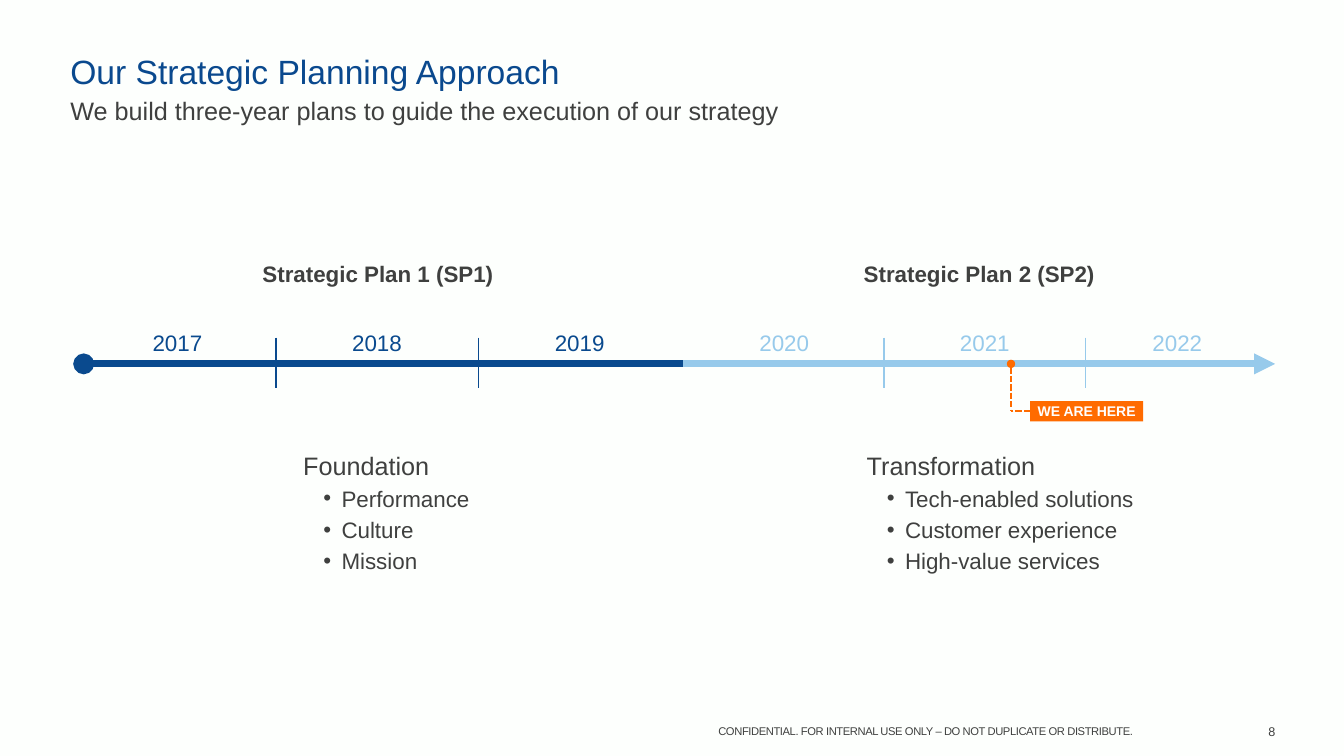
"""Build the strategic planning timeline slide."""
from dataclasses import dataclass, field

from lxml.etree import SubElement
from pptx import Presentation
from pptx.dml.color import RGBColor
from pptx.enum.dml import MSO_LINE
from pptx.enum.shapes import MSO_CONNECTOR, MSO_SHAPE
from pptx.enum.text import MSO_ANCHOR, PP_ALIGN
from pptx.oxml.ns import qn
from pptx.shapes.autoshape import Shape
from pptx.shapes.connector import Connector
from pptx.slide import Slide
from pptx.util import Pt


@dataclass(frozen=True)
class Theme:
    """Colours and type sizes of the slide."""
    font: str = "Arial"
    background: str = "FDFFFD"
    title_blue: str = "0A498E"
    dark_blue: str = "0A4A8E"
    light_blue: str = "97CAEB"
    orange: str = "FF6B00"
    text: str = "3F403F"
    white: str = "FFFFFF"
    title_size: float = 24
    lead_size: float = 18
    body_size: float = 16
    badge_size: float = 10
    number_size: float = 9
    footer_size: float = 8


THEME = Theme()


@dataclass(frozen=True)
class Label:
    """A single-paragraph text box, with lengths in points."""
    text: str
    left: float
    top: float
    width: float
    height: float
    size: float = THEME.body_size
    color: str = THEME.text
    bold: bool = False
    align: PP_ALIGN = PP_ALIGN.LEFT
    anchor: MSO_ANCHOR = MSO_ANCHOR.TOP
    padded: bool = True
    line_spacing: float = 1.0
    tracking: float = 0


@dataclass(frozen=True)
class Plan:
    """A three-year plan with its part of the timeline and its themes."""
    name: str
    left: float
    width: float
    color: str
    years: dict[str, float]
    ticks: tuple[float, ...]
    goal: str
    goal_left: float
    themes: tuple[str, ...]


@dataclass(frozen=True)
class Line:
    """A straight line, with lengths in points."""
    start: tuple[float, float]
    end: tuple[float, float]
    color: str
    weight: float
    dashed: bool = False
    ends: dict[str, str] = field(default_factory=dict)


LABELS = (
    Label("CONFIDENTIAL. FOR INTERNAL USE ONLY – DO NOT DUPLICATE OR DISTRIBUTE.",
          486, 514.08, 350.64, 17.28, THEME.footer_size, align=PP_ALIGN.CENTER, tracking=-0.3),
    Label("8", 874.08, 513.36, 43.92, 18, THEME.number_size,
          align=PP_ALIGN.RIGHT, anchor=MSO_ANCHOR.MIDDLE),
    Label("Our Strategic Planning Approach", 43.2, 36, 874.08, 33.12, THEME.title_size,
          THEME.title_blue, anchor=MSO_ANCHOR.BOTTOM, line_spacing=0.9),
    Label("We build three-year plans to guide the execution of our strategy",
          43.2, 64.8, 873.36, 28.8, THEME.lead_size),
)
PLANS = (
    Plan("Strategic Plan 1 (SP1)", 52.56, 434.88, THEME.dark_blue,
         {"2017": 97.2, "2018": 239.76, "2019": 384.48}, (197.28, 342),
         "Foundation", 209.52, ("Performance", "Culture", "Mission")),
    Plan("Strategic Plan 2 (SP2)", 488.16, 422.64, THEME.light_blue,
         {"2020": 530.64, "2021": 673.92, "2022": 811.44}, (631.44, 775.44),
         "Transformation", 612,
         ("Tech-enabled solutions", "Customer experience", "High-value services")),
)
AXIS_TOP = 259.92
AXIS_LINES = (
    Line((59.76, AXIS_TOP), (488.16, AXIS_TOP), THEME.dark_blue, 5, ends={"headEnd": "oval"}),
    Line((488.16, AXIS_TOP), (910.8, AXIS_TOP), THEME.light_blue, 5, ends={"tailEnd": "triangle"}),
)
TICK_TOP, TICK_BOTTOM = 241.2, 277.2
BADGE = Label("WE ARE HERE", 735.84, 286.56, 80.64, 14.4, THEME.badge_size, THEME.white,
              bold=True, align=PP_ALIGN.CENTER, anchor=MSO_ANCHOR.MIDDLE, padded=False)
MARKER_LEFT = 722.16
BADGE_MIDDLE = BADGE.top + BADGE.height / 2


def write_label(shape: Shape, label: Label) -> None:
    """Write a label's text into a shape."""
    frame = shape.text_frame
    frame.text = label.text
    frame.word_wrap = True
    frame.vertical_anchor = label.anchor
    if not label.padded:
        frame.margin_left = frame.margin_right = frame.margin_top = frame.margin_bottom = 0
    paragraph = frame.paragraphs[0]
    paragraph.alignment = label.align
    paragraph.line_spacing = label.line_spacing
    run = paragraph.runs[0]
    format_font(run.font, label.size, label.color, label.bold)
    if label.tracking:
        run.font._element.set("spc", str(round(label.tracking * 100)))


def format_font(font, size: float, color: str, bold: bool = False) -> None:
    """Apply the theme font with a size, colour and weight."""
    font.name = THEME.font
    font.size = Pt(size)
    font.bold = bold
    font.color.rgb = RGBColor.from_string(color)


def add_label(slide: Slide, label: Label) -> None:
    """Add a text box for a label."""
    box = slide.shapes.add_textbox(Pt(label.left), Pt(label.top), Pt(label.width), Pt(label.height))
    write_label(box, label)


def add_line(slide: Slide, line: Line) -> Connector:
    """Add a straight line with optional dashes and end marks."""
    connector = slide.shapes.add_connector(
        MSO_CONNECTOR.STRAIGHT, *(Pt(length) for length in (*line.start, *line.end)))
    connector.line.color.rgb = RGBColor.from_string(line.color)
    connector.line.width = Pt(line.weight)
    if line.dashed:
        connector.line.dash_style = MSO_LINE.SQUARE_DOT
    properties = connector._element.spPr
    for tag, kind in line.ends.items():
        SubElement(properties.find(qn("a:ln")), qn(f"a:{tag}"), type=kind)
    SubElement(properties, qn("a:effectLst"))
    return connector


def add_goal(slide: Slide, plan: Plan) -> None:
    """Add a plan's goal with its bulleted themes."""
    box = slide.shapes.add_textbox(Pt(plan.goal_left), Pt(318.24), Pt(243.36), Pt(96.48))
    frame = box.text_frame
    frame.text = "\n".join((plan.goal, *plan.themes))
    frame.word_wrap = True
    for index, paragraph in enumerate(frame.paragraphs):
        paragraph.space_after = Pt(3)
        if index:
            properties = paragraph._element.get_or_add_pPr()
            properties.set("marL", str(Pt(27.36)))
            properties.set("indent", str(Pt(-12.96)))
            SubElement(properties, qn("a:buFont"), typeface=THEME.font)
            SubElement(properties, qn("a:buChar"), char="•")
        size = THEME.body_size if index else THEME.lead_size
        format_font(paragraph.runs[0].font, size, THEME.text)


def add_plan(slide: Slide, plan: Plan) -> None:
    """Add a plan's heading, years, ticks and goal."""
    add_label(slide, Label(plan.name, plan.left, 185.76, plan.width, 19.44, bold=True,
                           align=PP_ALIGN.CENTER, padded=False))
    for year, left in plan.years.items():
        add_label(slide, Label(year, left, 235.44, 59.04, 19.44, color=plan.color,
                               align=PP_ALIGN.CENTER, padded=False))
    for left in plan.ticks:
        add_line(slide, Line((left, TICK_TOP), (left, TICK_BOTTOM), plan.color, 1))
    add_goal(slide, plan)


def add_marker(slide: Slide) -> None:
    """Add the badge for today and its dashed lead to the timeline."""
    badge = slide.shapes.add_shape(MSO_SHAPE.RECTANGLE, Pt(BADGE.left), Pt(BADGE.top),
                                   Pt(BADGE.width), Pt(BADGE.height))
    badge.shadow.inherit = False
    badge.fill.solid()
    badge.fill.fore_color.rgb = RGBColor.from_string(THEME.orange)
    badge.line.fill.background()
    write_label(badge, BADGE)
    badge.text_frame.word_wrap = False
    add_line(slide, Line((MARKER_LEFT, AXIS_TOP), (MARKER_LEFT, BADGE_MIDDLE), THEME.orange, 1.5,
                         dashed=True, ends={"headEnd": "oval"}))
    lead = add_line(slide, Line((BADGE.left, BADGE_MIDDLE), (MARKER_LEFT, BADGE_MIDDLE),
                                THEME.orange, 1.5, dashed=True))
    lead.begin_connect(badge, 1)


def main() -> None:
    """Build and save the presentation."""
    presentation = Presentation()
    presentation.slide_width, presentation.slide_height = Pt(960), Pt(540)
    slide = presentation.slides.add_slide(presentation.slide_layouts[6])
    slide.background.fill.solid()
    slide.background.fill.fore_color.rgb = RGBColor.from_string(THEME.background)
    for label in LABELS:
        add_label(slide, label)
    for plan in PLANS:
        add_plan(slide, plan)
    for line in AXIS_LINES:
        add_line(slide, line)
    add_marker(slide)
    presentation.save("out.pptx")


if __name__ == "__main__":
    main()
